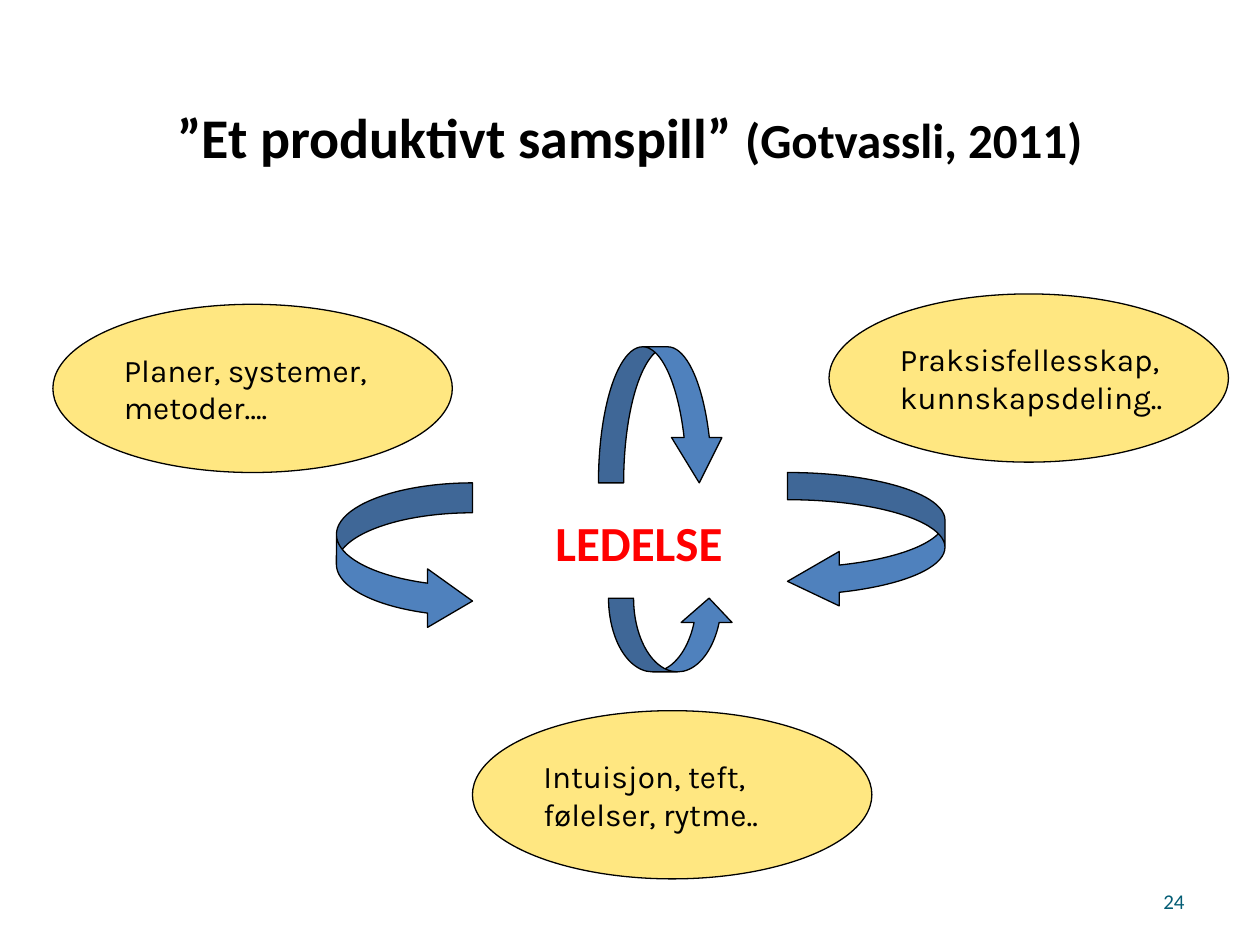
from pptx import Presentation
from pptx.dml.color import RGBColor
from pptx.enum.shapes import MSO_SHAPE as Shape
from pptx.enum.text import MSO_ANCHOR as Anchor, PP_ALIGN as Align
from pptx.util import Inches, Pt

WIDTH, HEIGHT = 10, 7.5
BLACK, YELLOW, BLUE = "000000", "FFE781", "4F81BD"
OVAL_SIZE = (0.317, 0.178)
OVALS = [
    ((0.042, 0.322), ["Planer, systemer,", "metoder…."]),
    ((0.658, 0.311), ["Praksisfellesskap,", "kunnskapsdeling.."]),
    ((0.375, 0.752), ["Intuisjon, teft,", "følelser, rytme.."]),
]
ARROWS = [
    (Shape.CURVED_RIGHT_ARROW, (0.267, 0.511, 0.108, 0.156), (0.22, 0.43, 0.33)),
    (Shape.CURVED_LEFT_ARROW, (0.625, 0.5, 0.125, 0.144), (0.2, 0.4, 0.38)),
    (Shape.CURVED_UP_ARROW, (0.483, 0.633, 0.1, 0.078), (0.34, 0.69, 0.33)),
    (Shape.CURVED_DOWN_ARROW, (0.475, 0.367, 0.1, 0.144), (0.2, 0.4, 0.36)),
]


def color(value):
    """Return a colour from its hex string."""
    return RGBColor.from_string(value)


def place(left, top, width, height):
    """Turn shares of the slide into lengths."""
    return (Inches(left * WIDTH), Inches(top * HEIGHT),
            Inches(width * WIDTH), Inches(height * HEIGHT))


def add_span(para, text, size, font="Calibri", ink=BLACK, bold=False):
    """Add one formatted run to a paragraph."""
    span = para.add_run()
    span.text = text
    span.font.size = Pt(size)
    span.font.name = font
    span.font.bold = bold
    span.font.color.rgb = color(ink)


def format_title(title):
    """Place the title and write its two sizes of text."""
    title.left, title.top, title.width, title.height = place(0.05, 0.079, 0.9, 0.131)
    title.text_frame.vertical_anchor = Anchor.MIDDLE
    para = title.text_frame.paragraphs[0]
    para.alignment = Align.CENTER
    add_span(para, "”Et produktivt samspill” ", 32, bold=True)
    add_span(para, "(Gotvassli, 2011)", 28, bold=True)


def add_outlined(page, kind, area, fill):
    """Add a filled shape with a thin black outline."""
    shape = page.shapes.add_shape(kind, *place(*area))
    shape.shadow.inherit = False
    shape.fill.solid()
    shape.fill.fore_color.rgb = color(fill)
    shape.line.color.rgb = color(BLACK)
    shape.line.width = Pt(0.75)
    return shape


def add_oval(page, corner, lines):
    """Add a yellow ellipse with left-aligned lines."""
    box = add_outlined(page, Shape.OVAL, corner + OVAL_SIZE, YELLOW).text_frame
    box.word_wrap = True
    box.margin_right = 0
    box.vertical_anchor = Anchor.MIDDLE
    for index, line in enumerate(lines):
        para = box.add_paragraph() if index else box.paragraphs[0]
        para.alignment = Align.LEFT
        add_span(para, line, 18, font="Karla")


def add_arrow(page, kind, area, adjustments):
    """Add a curved blue arrow."""
    arrow = add_outlined(page, kind, area, BLUE)
    for index, value in enumerate(adjustments):
        arrow.adjustments[index] = value


def add_label(page, area, text, size, ink, align=Align.LEFT, bold=False):
    """Add a one-line text box."""
    box = page.shapes.add_textbox(*place(*area)).text_frame
    box.word_wrap = True
    box.vertical_anchor = Anchor.MIDDLE
    para = box.paragraphs[0]
    para.alignment = align
    add_span(para, text, size, ink=ink, bold=bold)


def main():
    """Build and save the slide."""
    deck = Presentation()
    deck.slide_width, deck.slide_height = Inches(WIDTH), Inches(HEIGHT)
    page = deck.slides.add_slide(deck.slide_layouts[5])
    format_title(page.shapes.title)
    for corner, lines in OVALS:
        add_oval(page, corner, lines)
    for kind, area, adjustments in ARROWS:
        add_arrow(page, kind, area, adjustments)
    add_label(page, (0.717, 0.927, 0.233, 0.053), "24", 12, "045D75", Align.RIGHT)
    add_label(page, (0.431, 0.535, 0.188, 0.076), "LEDELSE", 28, "FF0000", bold=True)
    deck.save("out.pptx")


if __name__ == "__main__":
    main()
